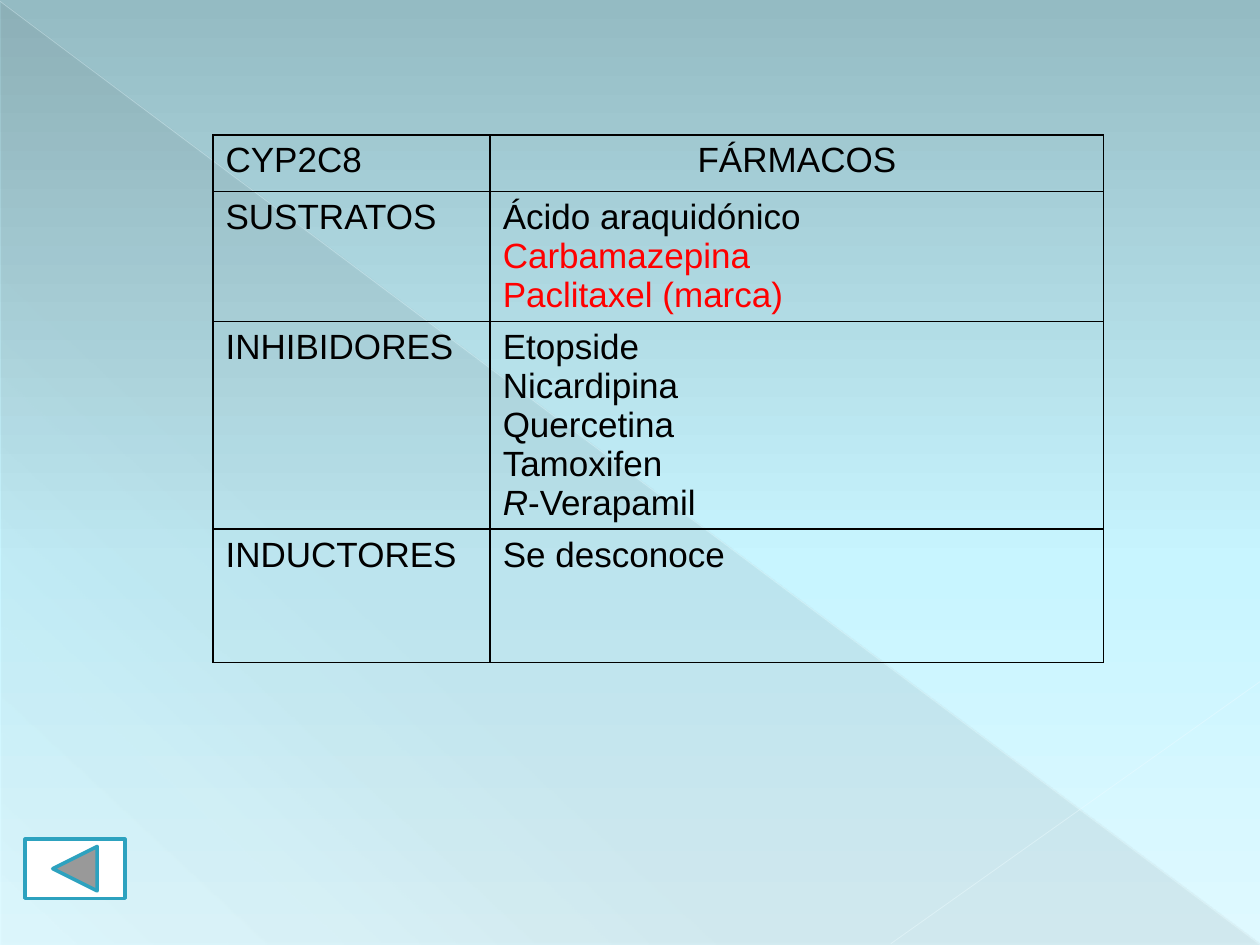
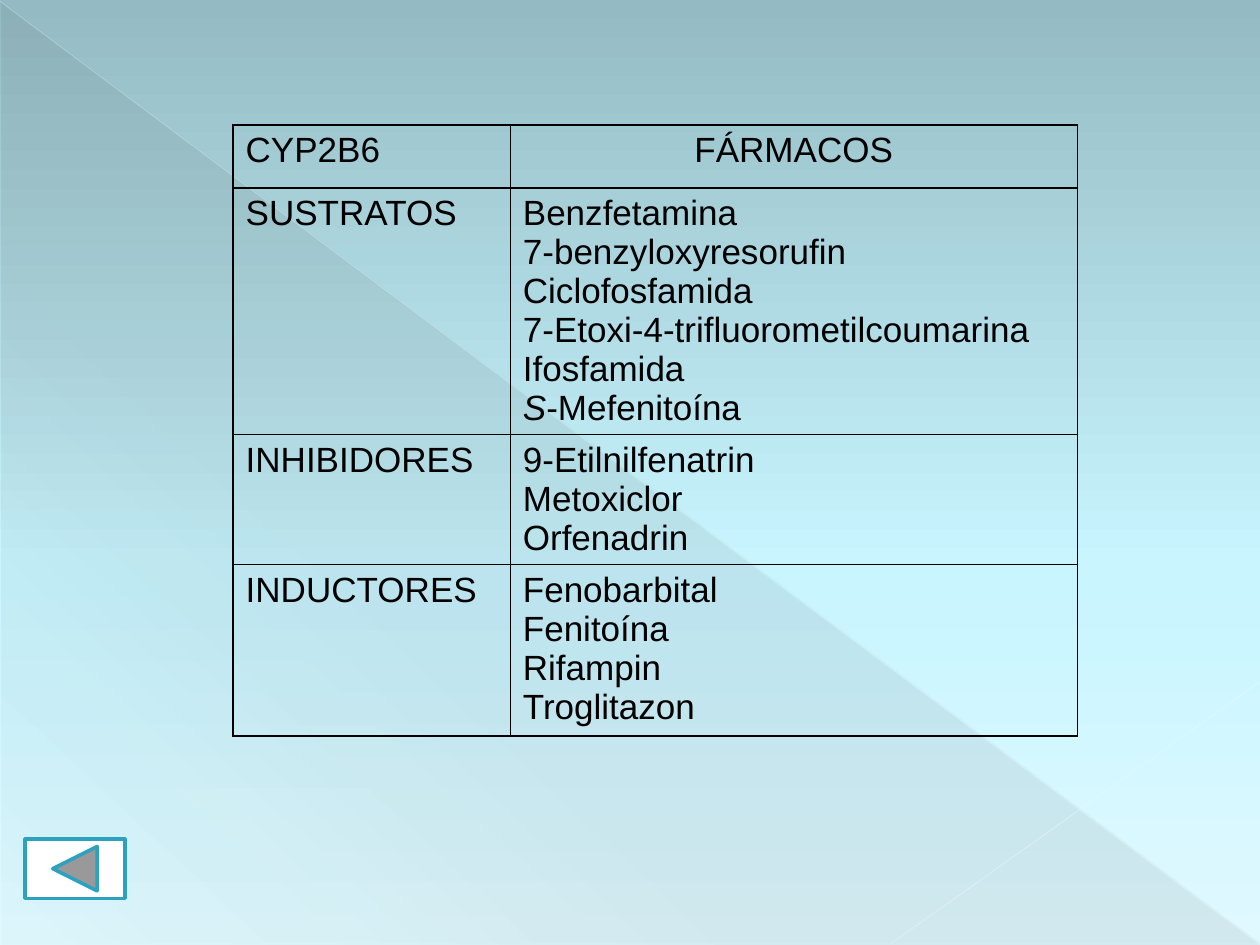
from lxml import etree
from pptx import Presentation
from pptx.dml.color import RGBColor
from pptx.enum.shapes import MSO_CONNECTOR, MSO_SHAPE
from pptx.enum.text import PP_ALIGN
from pptx.oxml.ns import qn
from pptx.util import Inches, Pt

STRAIGHT = MSO_CONNECTOR.STRAIGHT
RIGHT_TRIANGLE = MSO_SHAPE.RIGHT_TRIANGLE
BACK_BUTTON = MSO_SHAPE.ACTION_BUTTON_BACK_OR_PREVIOUS
CENTER, LEFT = PP_ALIGN.CENTER, PP_ALIGN.LEFT

WIDTH, HEIGHT = 10, 7.5
BLANK_LAYOUT = 6
FONT = "Arial"
COLORS = {
    "sky_top": "94BBC3",
    "sky_middle": "C8F5FF",
    "sky_bottom": "DFF9FF",
    "shade": "464646",
    "diagonal": "EBFBFF",
    "corner": "EDFCFF",
    "ink": "000000",
    "highlight": "FF0000",
    "button": "FFFFFF",
    "button_edge": "2DA2BF",
}
SKY = [("sky_top", 0, 100), ("sky_middle", 60, 100), ("sky_bottom", 100, 100)]
SHADE = [("shade", 0, 10), ("shade", 70, 8), ("shade", 100, 1)]
HIGHLIGHTED = {"Carbamazepina", "Paclitaxel (marca)"}
ITALIC_PREFIXES = ("R-", "S-")
ROW_LABELS = ["SUSTRATOS", "INHIBIDORES", "INDUCTORES"]
LABEL_COLUMN = 2.2

ENZYMES = [
    {
        "name": "CYP2C8",
        "corner": (1.69, 1.07),
        "drug_column": 4.87,
        "rows": [0.45, 1.03, 1.65, 1.06],
        "drugs": [
            ["Ácido araquidónico", "Carbamazepina", "Paclitaxel (marca)"],
            ["Etopside", "Nicardipina", "Quercetina", "Tamoxifen", "R-Verapamil"],
            ["Se desconoce"],
        ],
    },
    {
        "name": "CYP2B6",
        "corner": (1.85, 0.99),
        "drug_column": 4.5,
        "rows": [0.5, 1.96, 1.03, 1.36],
        "drugs": [
            ["Benzfetamina", "7-benzyloxyresorufin", "Ciclofosfamida",
             "7-Etoxi-4-trifluorometilcoumarina", "Ifosfamida", "S-Mefenitoína"],
            ["9-Etilnilfenatrin", "Metoxiclor", "Orfenadrin"],
            ["Fenobarbital", "Fenitoína", "Rifampin", "Troglitazon"],
        ],
    },
]


def rgb(name):
    """Return the named palette colour."""
    return RGBColor.from_string(COLORS[name])


def add_color(parent, name, opacity=100):
    """Append a palette colour with an opacity in percent."""
    color = etree.SubElement(parent, qn("a:srgbClr"), val=COLORS[name])
    if opacity < 100:
        etree.SubElement(color, qn("a:alpha"), val=str(opacity * 1000))


def set_gradient(fill, owner, stops, angle):
    """Fill with colour stops along a clockwise angle."""
    fill.gradient()
    fill.gradient_angle = 360 - angle
    stop_list = next(owner.iter(qn("a:gsLst")))
    for old_stop in list(stop_list):
        stop_list.remove(old_stop)
    for name, position, opacity in stops:
        stop = etree.SubElement(stop_list, qn("a:gs"), pos=str(position * 1000))
        add_color(stop, name, opacity)


def add_ray(slide, start, end, color, width, opacity):
    """Draw a translucent line across the background."""
    ray = slide.shapes.add_connector(STRAIGHT, *map(Inches, start + end))
    ray.line.width = Pt(width)
    ray.line.color.rgb = rgb(color)
    tint = next(ray.element.iter(qn("a:srgbClr")))
    etree.SubElement(tint, qn("a:alpha"), val=str(opacity * 1000))
    etree.SubElement(ray.element.spPr, qn("a:effectLst"))


def add_backdrop(slide):
    """Add the shaded triangle and the two rays of light."""
    triangle = slide.shapes.add_shape(
        RIGHT_TRIANGLE, Inches(0.01), Inches(0.02),
        Inches(WIDTH - 0.01), Inches(HEIGHT - 0.02))
    triangle.shadow.inherit = False
    triangle.line.fill.background()
    set_gradient(triangle.fill, triangle.element, SHADE, 133)
    add_ray(slide, (0, 0.01), (9.99, 7.49), "diagonal", 0.39, 35)
    add_ray(slide, (WIDTH, 5.41), (7.07, 7.49), "corner", 0.47, 45)


def add_back_button(slide):
    """Add the button that points to the previous slide."""
    button = slide.shapes.add_shape(
        BACK_BUTTON, Inches(0.2), Inches(6.66), Inches(0.79), Inches(0.47))
    button.shadow.inherit = False
    button.fill.solid()
    button.fill.fore_color.rgb = rgb("button")
    button.line.color.rgb = rgb("button_edge")
    button.line.width = Pt(2)


def write_entry(paragraph, entry, alignment):
    """Write one cell line, with a stereo prefix in italics."""
    paragraph.alignment = alignment
    paragraph.font.name = FONT
    paragraph.font.size = Pt(20)
    paragraph.font.color.rgb = rgb("highlight" if entry in HIGHLIGHTED else "ink")
    if entry.startswith(ITALIC_PREFIXES):
        prefix = paragraph.add_run()
        prefix.text, entry = entry[0], entry[1:]
        prefix.font.italic = True
    paragraph.add_run().text = entry


def fill_cell(cell, entries, alignment=LEFT):
    """Write the lines of a clear cell with black borders."""
    properties = cell._tc.get_or_add_tcPr()
    for side in ("lnL", "lnR", "lnT", "lnB"):
        border = etree.SubElement(properties, qn(f"a:{side}"), w=str(Pt(1)))
        add_color(etree.SubElement(border, qn("a:solidFill")), "ink")
    cell.fill.background()
    frame = cell.text_frame
    for index, entry in enumerate(entries):
        paragraph = frame.add_paragraph() if index else frame.paragraphs[0]
        write_entry(paragraph, entry, alignment)


def add_drug_table(slide, enzyme):
    """Add the table of drugs that act on an enzyme."""
    columns = [LABEL_COLUMN, enzyme["drug_column"]]
    rows = enzyme["rows"]
    left, top = enzyme["corner"]
    table = slide.shapes.add_table(
        len(rows), len(columns), Inches(left), Inches(top),
        Inches(sum(columns)), Inches(sum(rows))).table
    table.first_row = table.horz_banding = False
    for column, width in zip(table.columns, columns):
        column.width = Inches(width)
    for row, height in zip(table.rows, rows):
        row.height = Inches(height)
    fill_cell(table.cell(0, 0), [enzyme["name"]])
    fill_cell(table.cell(0, 1), ["FÁRMACOS"], CENTER)
    for index, (label, drugs) in enumerate(zip(ROW_LABELS, enzyme["drugs"]), 1):
        fill_cell(table.cell(index, 0), [label])
        fill_cell(table.cell(index, 1), drugs)


def main():
    """Build one slide for each enzyme."""
    deck = Presentation()
    deck.slide_width, deck.slide_height = Inches(WIDTH), Inches(HEIGHT)
    master = deck.slide_master
    set_gradient(master.background.fill, master.element, SKY, 90)
    for enzyme in ENZYMES:
        slide = deck.slides.add_slide(deck.slide_layouts[BLANK_LAYOUT])
        add_backdrop(slide)
        add_drug_table(slide, enzyme)
        add_back_button(slide)
    deck.save("out.pptx")


if __name__ == "__main__":
    main()
